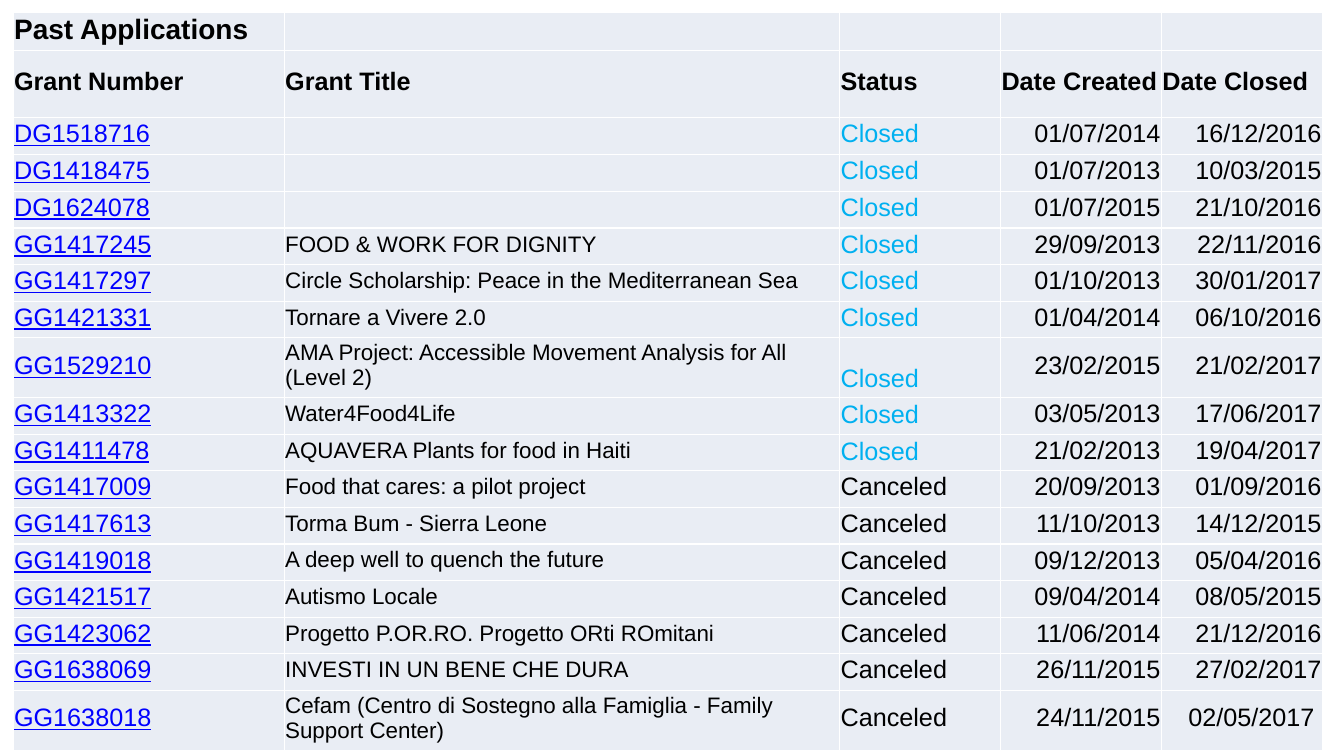
from lxml.etree import SubElement
from pptx import Presentation
from pptx.dml.color import RGBColor
from pptx.enum.text import MSO_ANCHOR, PP_ALIGN
from pptx.oxml.ns import qn
from pptx.util import Pt

PX = 3048  # EMU, 300 px to the inch
FONT = "Arial"
BLACK = RGBColor(0x00, 0x00, 0x00)
WHITE = RGBColor(0xFF, 0xFF, 0xFF)
LINK_BLUE = RGBColor(0x00, 0x00, 0xFF)
CLOSED_BLUE = RGBColor(0x00, 0xB0, 0xF0)
CELL_FILL = RGBColor(0xE9, 0xED, 0xF4)

COLUMN_WIDTHS = [807, 1653, 479, 479, 479]
TITLE_HEIGHT, HEADING_HEIGHT, GRANT_HEIGHT, TWO_LINE_HEIGHT = 115, 199, 109, 178

TITLE = "Past Applications"
HEADINGS = ["Grant Number ", "Grant Title ", "Status ", "Date Created ", "Date Closed "]
GRANTS = [
    ("DG1518716", "", "Closed", "01/07/2014", "16/12/2016"),
    ("DG1418475", "", "Closed", "01/07/2013", "10/03/2015"),
    ("DG1624078", "", "Closed", "01/07/2015", "21/10/2016"),
    ("GG1417245", "FOOD & WORK FOR DIGNITY", "Closed", "29/09/2013", "22/11/2016"),
    ("GG1417297", "Circle Scholarship: Peace in the Mediterranean Sea", "Closed",
     "01/10/2013", "30/01/2017"),
    ("GG1421331", "Tornare a Vivere 2.0", "Closed", "01/04/2014", "06/10/2016"),
    ("GG1529210", "AMA Project: Accessible Movement Analysis for All (Level 2)", "Closed",
     "23/02/2015", "21/02/2017"),
    ("GG1413322", "Water4Food4Life", "Closed", "03/05/2013", "17/06/2017"),
    ("GG1411478", "AQUAVERA Plants for food in Haiti", "Closed", "21/02/2013", "19/04/2017"),
    ("GG1417009", "Food that cares: a pilot project", "Canceled", "20/09/2013", "01/09/2016"),
    ("GG1417613", "Torma Bum - Sierra Leone", "Canceled", "11/10/2013", "14/12/2015"),
    ("GG1419018", "A deep well to quench the future", "Canceled", "09/12/2013", "05/04/2016"),
    ("GG1421517", "Autismo Locale", "Canceled", "09/04/2014", "08/05/2015"),
    ("GG1423062", "Progetto P.OR.RO. Progetto ORti ROmitani", "Canceled",
     "11/06/2014", "21/12/2016"),
    ("GG1638069", "INVESTI IN UN BENE CHE DURA", "Canceled", "26/11/2015", "27/02/2017"),
    ("GG1638018", "Cefam (Centro di Sostegno alla Famiglia - Family Support Center)",
     "Canceled", "24/11/2015", "02/05/2017 "),
]
TWO_LINE_GRANTS = {"GG1529210", "GG1638018"}
LOW_STATUS_GRANTS = {"GG1529210", "GG1413322", "GG1411478"}


def write(cell, text, size=18, color=BLACK, bold=False, underline=False,
          align=PP_ALIGN.LEFT, anchor=MSO_ANCHOR.MIDDLE):
    cell.vertical_anchor = anchor
    paragraph = cell.text_frame.paragraphs[0]
    paragraph.alignment = align
    if text:
        run = paragraph.add_run()
        run.text = text
        run.font.name = FONT
        run.font.size = Pt(size)
        run.font.bold = bold
        run.font.underline = underline
        run.font.color.rgb = color


def style_cell(cell):
    """Set the tight margins, white borders and fill shared by all cells."""
    cell.margin_left = cell.margin_top = cell.margin_right = 3 * PX
    cell.margin_bottom = 15 * PX
    properties = cell._tc.get_or_add_tcPr()
    for side in ("a:lnL", "a:lnR", "a:lnT", "a:lnB"):
        border = SubElement(properties, qn(side), w=str(Pt(1)))
        border_fill = SubElement(border, qn("a:solidFill"))
        SubElement(border_fill, qn("a:srgbClr"), val=str(WHITE))
    cell.fill.solid()
    cell.fill.fore_color.rgb = CELL_FILL


def write_grant(cells, grant):
    number, title, status, created, closed = grant
    write(cells[0], number, color=LINK_BLUE, underline=True)
    write(cells[1], title, size=16)
    write(cells[2], status, color=CLOSED_BLUE if status == "Closed" else BLACK,
          anchor=MSO_ANCHOR.BOTTOM if number in LOW_STATUS_GRANTS else MSO_ANCHOR.MIDDLE)
    write(cells[3], created, align=PP_ALIGN.RIGHT)
    write(cells[4], closed, align=PP_ALIGN.RIGHT)


def add_grants_table(slide):
    heights = [TITLE_HEIGHT, HEADING_HEIGHT] + [
        TWO_LINE_HEIGHT if grant[0] in TWO_LINE_GRANTS else GRANT_HEIGHT for grant in GRANTS]
    table = slide.shapes.add_table(
        len(heights), len(COLUMN_WIDTHS), 39 * PX, 36 * PX,
        sum(COLUMN_WIDTHS) * PX, sum(heights) * PX).table
    table.first_row = table.horz_banding = False
    for column, width in zip(table.columns, COLUMN_WIDTHS):
        column.width = width * PX
    for row, height in zip(table.rows, heights):
        row.height = height * PX
    for cell in table.iter_cells():
        style_cell(cell)

    title_row, heading_row, *grant_rows = [list(row.cells) for row in table.rows]
    write(title_row[0], TITLE, size=20, bold=True)
    for cell, heading in zip(heading_row, HEADINGS):
        write(cell, heading, bold=True)
    for cells, grant in zip(grant_rows, GRANTS):
        write_grant(cells, grant)


def main():
    presentation = Presentation()
    presentation.slide_width = 4000 * PX
    presentation.slide_height = 2250 * PX
    slide = presentation.slides.add_slide(presentation.slide_layouts[6])
    add_grants_table(slide)
    presentation.save("out.pptx")


if __name__ == "__main__":
    main()
